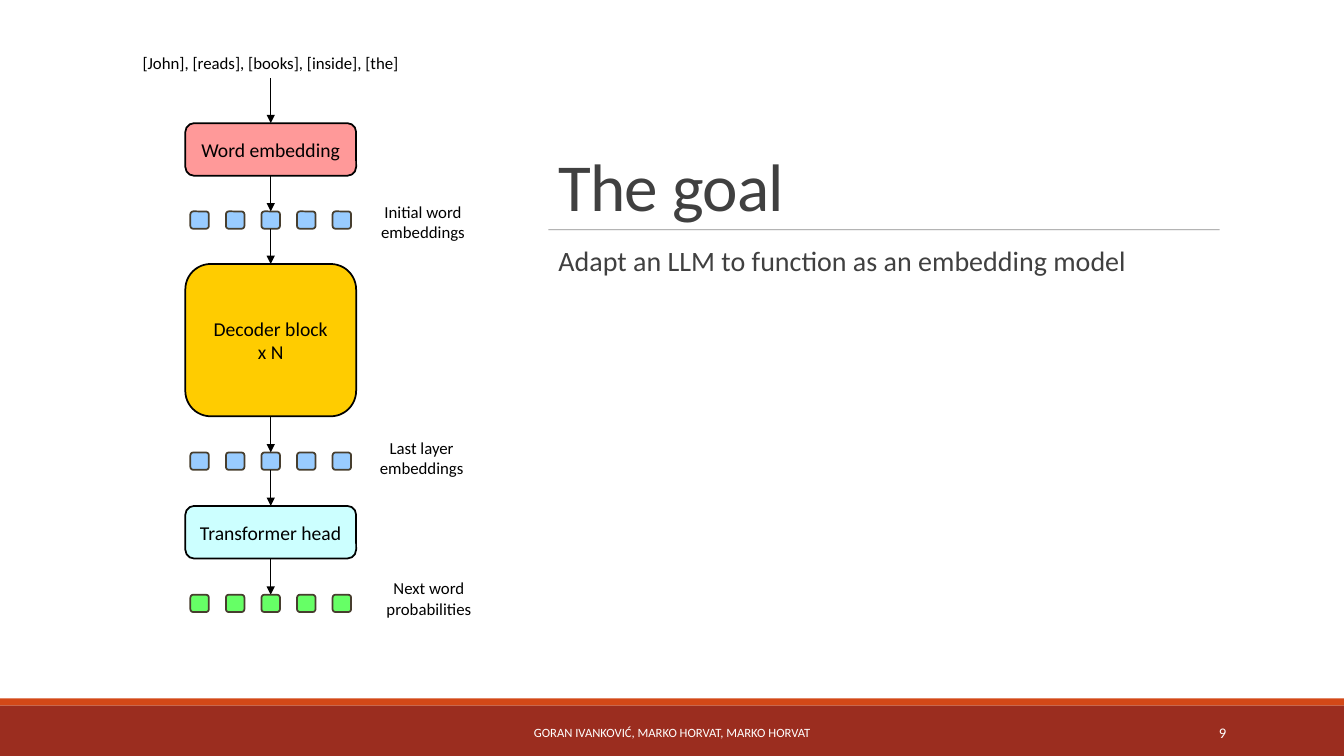
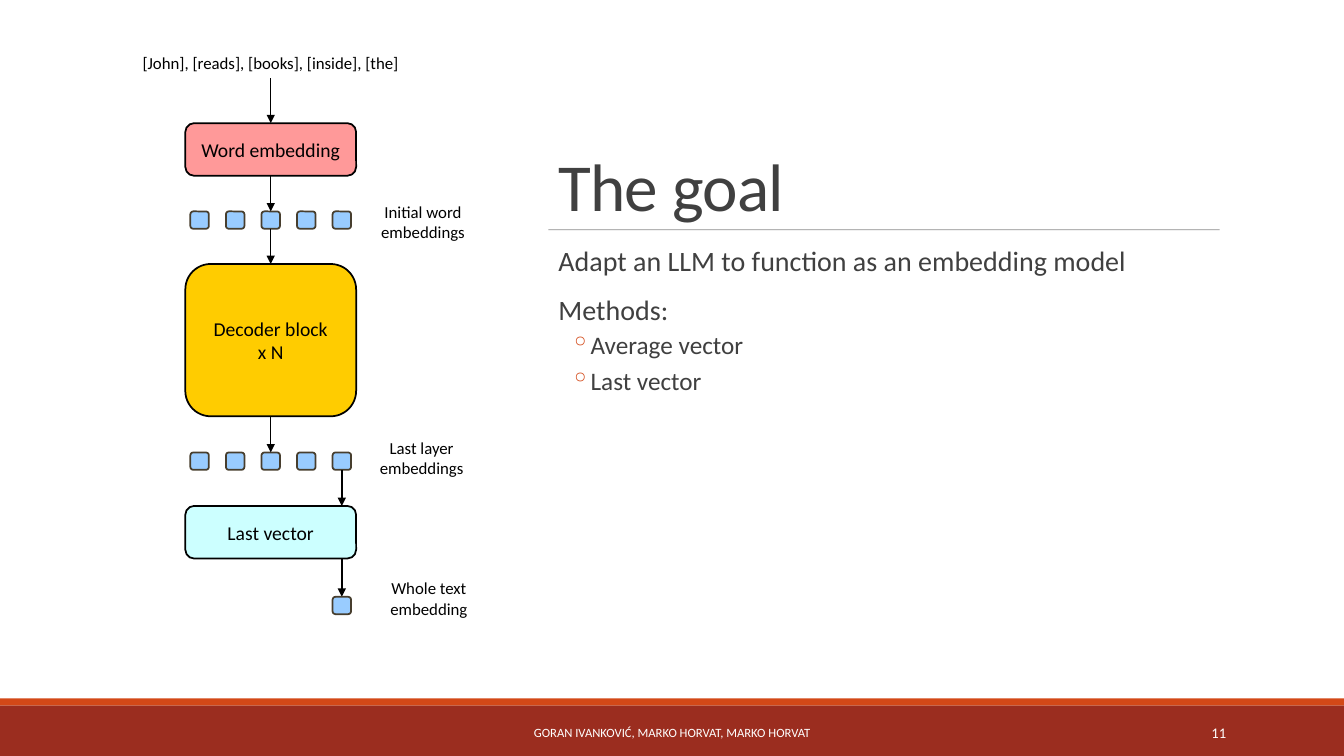
from lxml.etree import SubElement
from pptx import Presentation
from pptx.dml.color import RGBColor
from pptx.enum.shapes import MSO_CONNECTOR, MSO_SHAPE
from pptx.enum.text import MSO_ANCHOR, PP_ALIGN
from pptx.oxml.ns import qn
from pptx.util import Pt

COLORS = {
    "text": "404040", "black": "000000", "white": "FFFFFF", "rule": "808080",
    "accent": "D34817", "footer": "9B2D1F", "token_line": "473E2E",
    "pink": "FF9999", "yellow": "FFCC00", "cyan": "CCFFFF",
    "blue": "99CCFF", "green": "66FF66",
}
FONT = "Calibri"
CENTER = 193.4
BOX_WIDTH = 122
BOX_HEIGHT = 37.6
TOKEN_WIDTH, TOKEN_HEIGHT = 13.2, 12.4
TOKEN_PITCH = 25.4
LAST = CENTER + 2 * TOKEN_PITCH
EMBED_TOP, DECODER_TOP, HEAD_TOP = 88, 188.6, 361.4
DECODER_HEIGHT = 108.8
INITIAL_TOP, LAYER_TOP = 151, 323.2
WORDS_TOP, VECTOR_TOP = 424.8, 426.3


class Deck:
    """Holds the deck style and the current page."""

    def __init__(self):
        self.deck = Presentation()
        self.deck.slide_width, self.deck.slide_height = Pt(960), Pt(540)
        self.page = None

    def color(self, name):
        return RGBColor.from_string(COLORS[name])

    def set_text(self, frame, lines, size, color, align=PP_ALIGN.CENTER, anchor=MSO_ANCHOR.MIDDLE):
        frame.vertical_anchor = anchor
        frame.text = "\n".join(lines)
        for para in frame.paragraphs:
            para.alignment = align
            para.font.name = FONT
            para.font.size = Pt(size)
            para.font.color.rgb = self.color(color)

    def frame(self, left, top, width, height, wrap=True):
        box = self.page.shapes.add_textbox(Pt(left), Pt(top), Pt(width), Pt(height))
        box.text_frame.word_wrap = wrap
        return box.text_frame

    def shape(self, kind, left, top, width, height, fill, line=None):
        shape = self.page.shapes.add_shape(kind, Pt(left), Pt(top), Pt(width), Pt(height))
        shape.shadow.inherit = False
        shape.fill.solid()
        shape.fill.fore_color.rgb = self.color(fill)
        if line:
            shape.line.color.rgb = self.color(line)
            shape.line.width = Pt(1.25)
        else:
            shape.line.fill.background()
        return shape

    def line(self, start_x, start_y, end_x, end_y, color, width):
        line = self.page.shapes.add_connector(
            MSO_CONNECTOR.STRAIGHT, Pt(start_x), Pt(start_y), Pt(end_x), Pt(end_y))
        line.line.color.rgb = self.color(color)
        line.line.width = Pt(width)
        SubElement(line._element.spPr, qn("a:effectLst"))
        return line

    def arrow(self, x, top, bottom):
        line = self.line(x, top, x, bottom, "black", 1)
        SubElement(line.line._get_or_add_ln(), qn("a:tailEnd"), type="triangle")

    def block(self, lines, top, height, fill):
        box = self.shape(MSO_SHAPE.ROUNDED_RECTANGLE, CENTER - BOX_WIDTH / 2, top,
                         BOX_WIDTH, height, fill, "black")
        box.text_frame.margin_left = box.text_frame.margin_right = 0
        self.set_text(box.text_frame, lines, 14, "black")

    def token(self, x, top, fill):
        self.shape(MSO_SHAPE.ROUNDED_RECTANGLE, x - TOKEN_WIDTH / 2, top,
                   TOKEN_WIDTH, TOKEN_HEIGHT, fill, "token_line")

    def tokens(self, top, fill):
        for step in range(-2, 3):
            self.token(CENTER + step * TOKEN_PITCH, top, fill)

    def label(self, lines, center, top):
        frame = self.frame(center - 100, top, 200, 7.2 + 14.4 * len(lines), wrap=False)
        self.set_text(frame, lines, 12, "black", anchor=MSO_ANCHOR.TOP)

    def title(self, text):
        frame = self.frame(391.7, 49.7, 517.7, 114.5)
        self.set_text(frame, [text], 48, "text", PP_ALIGN.LEFT, MSO_ANCHOR.BOTTOM)
        para = frame.paragraphs[0]
        para.line_spacing = 0.85
        para.font._element.set("spc", "-50")
        rule = self.line(391.7, 164.2, 871.2, 164.2, "rule", 0.5)
        srgb = rule.line._get_or_add_ln().find(".//" + qn("a:srgbClr"))
        SubElement(srgb, qn("a:alpha"), val="90000")

    def body(self, lines, bullets):
        frame = self.frame(391.7, 172.8, 517.7, 288.7)
        frame.margin_left = frame.margin_right = 0
        self.set_text(frame, lines + bullets, 20, "text", PP_ALIGN.LEFT, MSO_ANCHOR.TOP)
        for index, para in enumerate(frame.paragraphs):
            bulleted = index >= len(lines)
            para.line_spacing = 0.9
            para.space_before = Pt(2 if bulleted else 12)
            para.space_after = Pt(4 if bulleted else 2)
            props = para._p.get_or_add_pPr()
            props.set("marL", str(Pt(30.2 if bulleted else 7.2)))
            props.set("indent", str(Pt(-14.4 if bulleted else 0)))
            if bulleted:
                para.font.size = Pt(18)
                self.bullet(props)

    def bullet(self, props):
        color = SubElement(props, qn("a:buClr"))
        SubElement(color, qn("a:srgbClr"), val=COLORS["accent"])
        mark = SubElement(props, qn("a:buChar"), char="◦")
        props.find(qn("a:defRPr")).addprevious(color)
        color.addnext(mark)

    def footer(self, number):
        self.shape(MSO_SHAPE.RECTANGLE, 0, 498.8, 960, 5.2, "accent")
        self.shape(MSO_SHAPE.RECTANGLE, 0, 504, 960, 36, "footer")
        self.set_text(self.frame(290, 508.6, 380, 28.8),
                      ["GORAN IVANKOVIĆ, MARKO HORVAT, MARKO HORVAT"], 9, "white")
        self.set_text(self.frame(780, 508.6, 103, 28.8), [str(number)], 10.5, "white",
                      PP_ALIGN.RIGHT)

    def goal_page(self, number, bullets, head, output, output_x, output_top):
        self.page = self.deck.slides.add_slide(self.deck.slide_layouts[6])
        self.title("The goal")
        lines = ["Adapt an LLM to function as an embedding model"]
        self.body(lines + ["Methods:"] if bullets else lines, bullets)
        self.footer(number)
        self.block(["Word embedding"], EMBED_TOP, BOX_HEIGHT, "pink")
        self.block(["Decoder block", "x N"], DECODER_TOP, DECODER_HEIGHT, "yellow")
        self.block([head], HEAD_TOP, BOX_HEIGHT, "cyan")
        self.tokens(INITIAL_TOP, "blue")
        self.tokens(LAYER_TOP, "blue")
        self.label(["[John], [reads], [books], [inside], [the]"], CENTER, 34)
        self.label(["Initial word", "embeddings"], 302.2, 140.8)
        self.label(["Last layer", "embeddings"], 301.2, 308.9)
        self.label(output, 306.4, 409.4)
        for x, top, bottom in [
            (CENTER, 56, EMBED_TOP),
            (CENTER, EMBED_TOP + BOX_HEIGHT, INITIAL_TOP),
            (CENTER, INITIAL_TOP + TOKEN_HEIGHT, DECODER_TOP),
            (CENTER, DECODER_TOP + DECODER_HEIGHT, LAYER_TOP),
            (output_x, LAYER_TOP + TOKEN_HEIGHT, HEAD_TOP),
            (output_x, HEAD_TOP + BOX_HEIGHT, output_top),
        ]:
            self.arrow(x, top, bottom)


def main():
    show = Deck()
    show.goal_page(9, [], "Transformer head", ["Next word", "probabilities"],
                   CENTER, WORDS_TOP)
    show.tokens(WORDS_TOP, "green")
    show.goal_page(11, ["Average vector", "Last vector"], "Last vector",
                   ["Whole text", "embedding"], LAST, VECTOR_TOP)
    show.token(LAST, VECTOR_TOP, "blue")
    show.deck.save("out.pptx")


if __name__ == "__main__":
    main()
